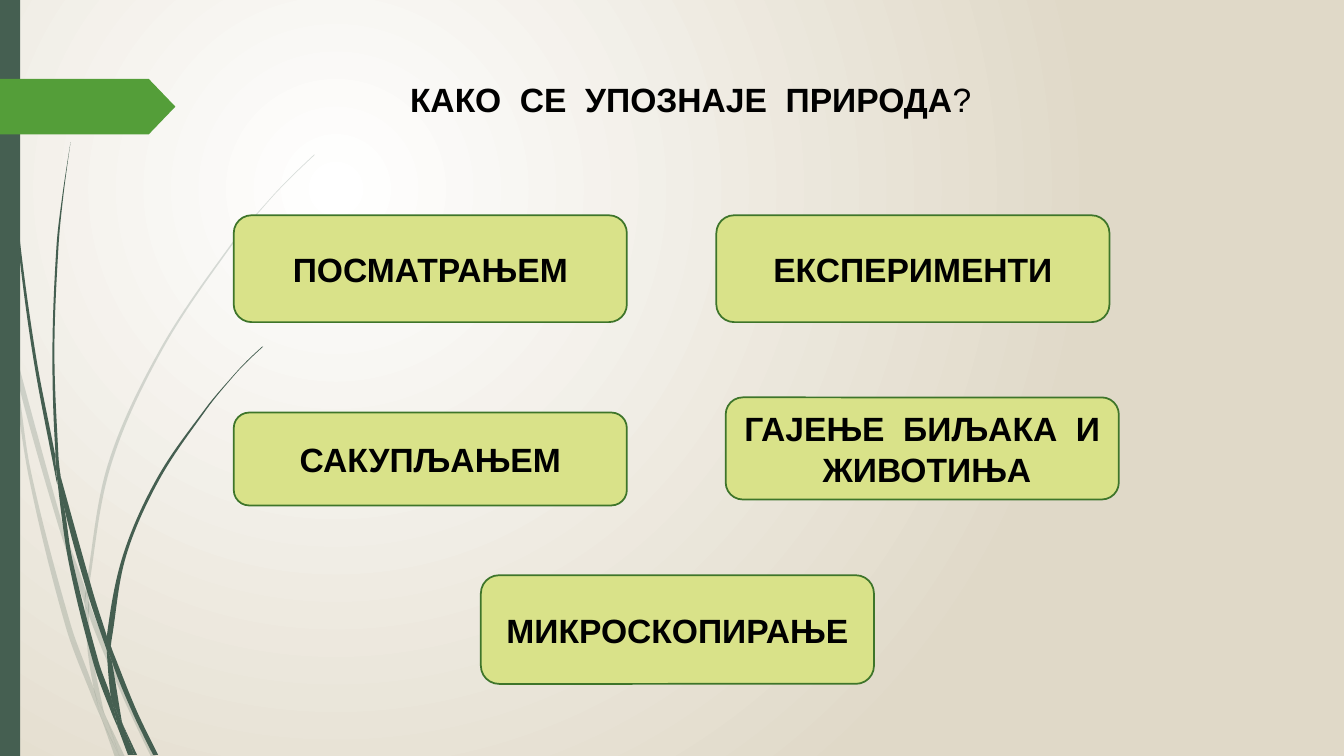
"""Builds the slide on ways of getting to know nature."""
from math import hypot

from lxml import etree
from pptx import Presentation
from pptx.dml.color import RGBColor
from pptx.enum.shapes import MSO_SHAPE
from pptx.enum.text import MSO_ANCHOR, PP_ALIGN
from pptx.oxml.ns import qn
from pptx.util import Pt

RECTANGLE = MSO_SHAPE.RECTANGLE
ROUNDED = MSO_SHAPE.ROUNDED_RECTANGLE
PENTAGON = MSO_SHAPE.PENTAGON
MIDDLE = MSO_ANCHOR.MIDDLE
CENTER = PP_ALIGN.CENTER

THEME = {
    "font": "Arial",
    "size": Pt(24),
    "text": RGBColor.from_string("000000"),
    "glow": RGBColor.from_string("FFFFFF"),
    "sand": RGBColor.from_string("E0D9C8"),
    "grass": RGBColor.from_string("455F51"),
    "arrow": RGBColor.from_string("549E39"),
    "card": RGBColor.from_string("D9E289"),
    "card_line": RGBColor.from_string("3E752A"),
}

GRASS_UNIT = 0.72
FAINT_GRASS = [
    [(11, 350), (9, 322), (0, 282), (0, 299), (10, 344)],
    [(58, 522), (84, 599), (85, 586), (62, 520), (14, 345), (17, 376)],
    [(92, 607), (88, 596), (88, 610), (123, 694), (150, 751), (155, 751), (127, 692)],
    [(119, 751), (124, 751), (105, 711)],
    [(93, 683), (70, 619), (31, 469), (17, 376), (11, 350), (28, 470), (65, 621),
     (92, 693), (101, 714), (99, 707)],
    [(84, 599), (87, 646), (93, 683), (96, 692), (105, 711), (103, 706), (91, 646),
     (88, 610), (88, 608)],
    [(88, 584), (110, 462), (160, 349), (229, 245), (268, 198), (290, 175), (312, 154),
     (312, 153), (289, 175), (268, 197), (228, 244), (158, 348), (107, 461), (85, 584),
     (85, 586), (88, 596)],
    [(101, 714), (114, 751), (119, 751)],
    [(88, 608), (88, 610), (88, 596), (85, 586), (84, 599)],
    [(96, 692), (93, 683), (99, 707), (101, 714), (119, 751), (105, 711)],
]
DARK_GRASS = [
    [(7, 110), (17, 233), (33, 355), (56, 477), (57, 481), (55, 457), (55, 453),
     (36, 355), (19, 232), (8, 109), (5, 48), (4, 0), (3, 0), (4, 48)],
    [(88, 592), (106, 645), (106, 633), (106, 631), (93, 590), (60, 472), (64, 505)],
    [(113, 649), (110, 641), (111, 656), (132, 708), (152, 749), (157, 749), (136, 706)],
    [(110, 691), (98, 657), (72, 556), (64, 505), (57, 477), (68, 557), (93, 659),
     (111, 708), (117, 722), (116, 717)],
    [(60, 472), (58, 453), (54, 349), (58, 245), (63, 193), (70, 141), (62, 193),
     (56, 245), (52, 349), (55, 449)],
    [(133, 749), (136, 749), (122, 719)],
    [(57, 477), (64, 505), (60, 472), (55, 449), (55, 453)],
    [(111, 633), (125, 552), (158, 476), (205, 406), (231, 374), (245, 359), (261, 344),
     (260, 344), (245, 358), (231, 373), (204, 405), (156, 474), (122, 551), (106, 631),
     (110, 641)],
    [(117, 722), (127, 749), (131, 749)],
    [(106, 645), (110, 691), (116, 706), (122, 719), (121, 716), (111, 656), (109, 651)],
    [(106, 645), (109, 651), (111, 656), (110, 641), (106, 631), (106, 633)],
    [(116, 706), (110, 691), (116, 717), (117, 722), (130, 749), (133, 749), (122, 719)],
]
CORNER = 0.8

CARD_WIDTH = 280.8
CARDS = [
    ("ПОСМАТРАЊЕМ", 167, 153.8, 76.3),
    ("САКУПЉАЊЕМ", 167, 294.7, 66.4),
    ("ЕКСПЕРИМЕНТИ", 511.7, 153.8, 76.3),
    ("ГАЈЕЊЕ  БИЉАКА  И  ЖИВОТИЊА", 518.4, 283.9, 72.9),
    ("МИКРОСКОПИРАЊЕ", 343.5, 410.9, 77.6),
]


def paint(shape, color):
    shape.shadow.inherit = False
    shape.fill.solid()
    shape.fill.fore_color.rgb = color
    shape.line.fill.background()


def round_outline(blade):
    outline = blade.element.find(".//" + qn("a:path"))
    points = [(int(p.get("x")), int(p.get("y"))) for p in outline.iter(qn("a:pt"))]
    steps = [(c - a, d - b) for (a, b), (c, d) in zip(points, points[1:] + points[:1])]
    tangents = []
    for (a, b), (c, d) in zip(steps[-1:] + steps, steps):
        smooth = a * c + b * d > CORNER * hypot(a, b) * hypot(c, d)
        reach = 3 * hypot(a + c, b + d)
        tangents.append(((a + c) / reach, (b + d) / reach) if smooth else (0, 0))
    close = outline.find(qn("a:close"))
    for segment in outline.findall(qn("a:lnTo")):
        outline.remove(segment)
    for i, step in enumerate(steps):
        j = (i + 1) % len(points)
        (x, y), (u, v), length = points[i], points[j], hypot(*step)
        (p, q), (r, s) = tangents[i], tangents[j]
        curve = etree.Element(qn("a:cubicBezTo"))
        for cx, cy in ((x + p * length, y + q * length), (u - r * length, v - s * length), (u, v)):
            etree.SubElement(curve, qn("a:pt"), x=str(round(cx)), y=str(round(cy)))
        close.addprevious(curve)


prs = Presentation()
prs.slide_width, prs.slide_height = Pt(960), Pt(540)
slide = prs.slides.add_slide(prs.slide_layouts[6])

backdrop = slide.background.fill
backdrop.gradient()
for stop, position, color in zip(backdrop.gradient_stops, (0, 1), ("glow", "sand")):
    stop.position = position
    stop.color.rgb = THEME[color]
gradient = slide.element.find(".//" + qn("a:gradFill"))
gradient.remove(gradient.find(qn("a:lin")))
circle = etree.SubElement(gradient, qn("a:path"), path="circle")
etree.SubElement(circle, qn("a:fillToRect"), l="50000", t="50000", r="100000", b="100000")

for blades, opacity in ((FAINT_GRASS, "20000"), (DARK_GRASS, "100000")):
    tuft = slide.shapes.add_group_shape()
    for knots in blades:
        corners = [(Pt(x * GRASS_UNIT), Pt(y * GRASS_UNIT)) for x, y in knots]
        builder = tuft.shapes.build_freeform(*corners[0])
        builder.add_line_segments(corners[1:], close=True)
        blade = builder.convert_to_shape()
        paint(blade, THEME["grass"])
        round_outline(blade)
        tint = blade.element.spPr.find(qn("a:solidFill"))[0]
        etree.SubElement(tint, qn("a:alpha"), val=opacity)

sidebar = slide.shapes.add_shape(RECTANGLE, 0, 0, Pt(14.4), Pt(540))
paint(sidebar, THEME["grass"])
arrow = slide.shapes.add_shape(PENTAGON, 0, Pt(56.3), Pt(125.3), Pt(39.8))
paint(arrow, THEME["arrow"])
arrow.adjustments[0] = 0.48

title = slide.shapes.add_textbox(Pt(285.8), Pt(52.6), Pt(419), Pt(36))
title.text_frame.word_wrap = False
question = title.text_frame.paragraphs[0]
question.font.name, question.font.size = THEME["font"], THEME["size"]
question.font.color.rgb = THEME["text"]
for words, bold in (("КАКО  СЕ  УПОЗНАЈЕ  ПРИРОДА", True), ("?", False)):
    run = question.add_run()
    run.text = words
    run.font.bold = bold

for method, left, top, height in CARDS:
    card = slide.shapes.add_shape(ROUNDED, Pt(left), Pt(top), Pt(CARD_WIDTH), Pt(height))
    paint(card, THEME["card"])
    card.line.color.rgb = THEME["card_line"]
    card.line.width = Pt(1.25)
    card.text_frame.word_wrap = True
    card.text_frame.vertical_anchor = MIDDLE
    label = card.text_frame.paragraphs[0]
    label.text = method
    label.alignment = CENTER
    label.font.name, label.font.size = THEME["font"], THEME["size"]
    label.font.bold = True
    label.font.color.rgb = THEME["text"]

prs.save("out.pptx")
